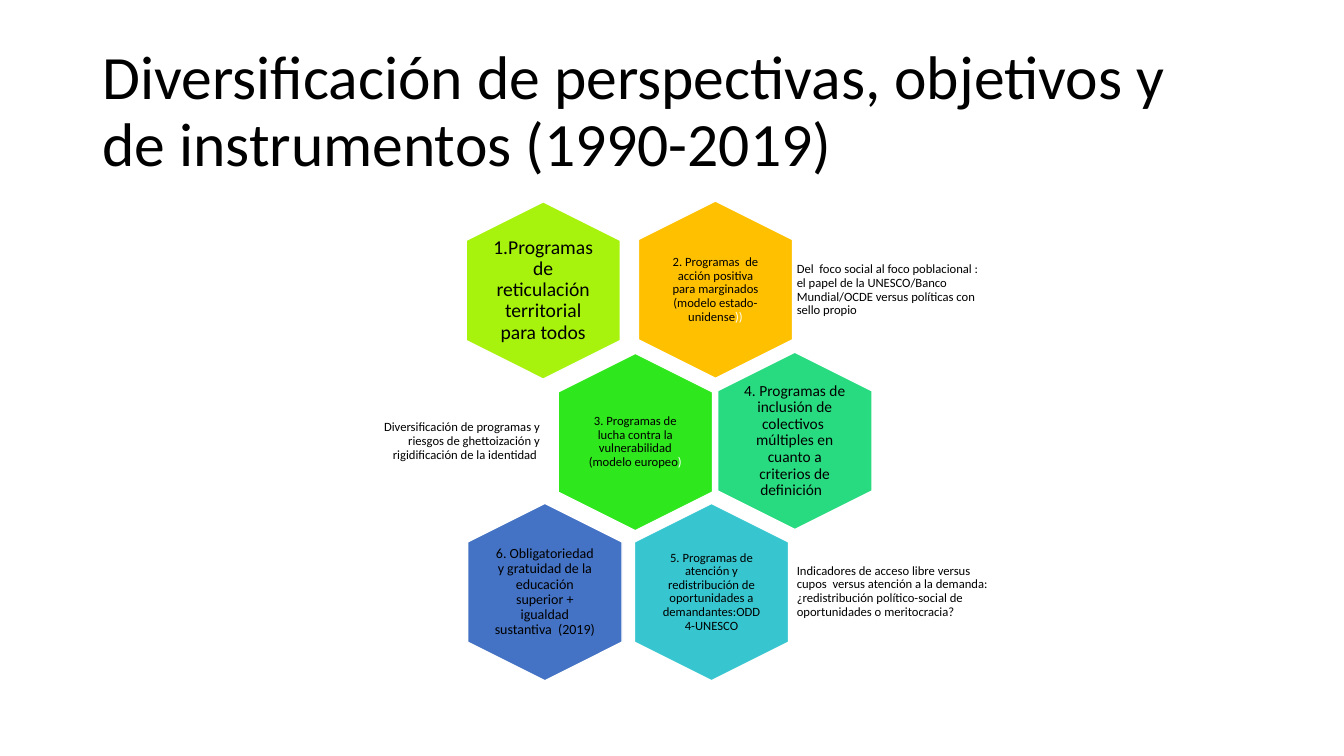
"""Build a slide with a honeycomb of six programmes and three side notes."""
import dataclasses
import typing

import pptx
import pptx.dml.color
import pptx.enum.shapes
import pptx.enum.text
import pptx.util

Cm = pptx.util.Cm
Align = pptx.enum.text.PP_ALIGN


@dataclasses.dataclass(frozen=True)
class Theme:
    """Colours, font and type sizes of the slide."""
    font: str = "Calibri"
    ink: str = "000000"
    paper: str = "FFFFFF"
    lime: str = "A7F30E"
    amber: str = "FFC000"
    green: str = "2EE71C"
    emerald: str = "29DB80"
    turquoise: str = "37C6CF"
    blue: str = "4472C4"
    title: int = 44
    large: int = 14
    medium: int = 11
    normal: int = 10
    small: int = 9


THEME = Theme()
HEXAGON_LENGTH, HEXAGON_BREADTH = 4.47, 3.89
LABEL_WIDTH, LABEL_HEIGHT = 2.69, 3.07
NOTE_HEIGHT = 2.69
INSET = 0.09


class Programme(typing.NamedTuple):
    """A hexagon with its centre, label and an optional pale ending."""
    center_x: float
    center_y: float
    color: str
    size: int
    inset: float
    label: str
    ending: str = ""


class Note(typing.NamedTuple):
    """A remark beside a row of hexagons."""
    left: float
    top: float
    width: float
    align: Align
    text: str


PROGRAMMES = [
    Programme(18.03, 7.3, THEME.amber, THEME.small, INSET,
              "2. Programas  de acción positiva para marginados (modelo estado-unidense", "))"),
    Programme(13.69, 7.32, THEME.lime, THEME.large, 0,
              "1.Programas de reticulación territorial para todos"),
    Programme(16.01, 11.14, THEME.green, THEME.small, INSET,
              "3. Programas de lucha contra la vulnerabilidad (modelo europeo", ")"),
    Programme(20.03, 11.11, THEME.emerald, THEME.medium, 0,
              "4. Programas de inclusión de colectivos  múltiples en cuanto a criterios de definición  "),
    Programme(17.93, 14.92, THEME.turquoise, THEME.small, INSET,
              "5. Programas de atención y redistribución de oportunidades a demandantes:ODD 4-UNESCO"),
    Programme(13.73, 14.92, THEME.blue, THEME.normal, 0,
              "6. Obligatoriedad y gratuidad de la educación superior + igualdad sustantiva  (2019)"),
]

NOTES = [
    Note(19.99, 5.97, 5, Align.LEFT,
         "Del  foco social al foco poblacional :  el papel de la UNESCO/Banco Mundial/OCDE "
         "versus políticas con sello propio"),
    Note(8.86, 9.78, 4.83, Align.RIGHT,
         "Diversificación de programas y riesgos de ghettoización y rigidificación de la identidad "),
    Note(19.99, 13.56, 5, Align.LEFT,
         "Indicadores de acceso libre versus cupos  versus atención a la demanda: "
         "¿redistribución político-social de oportunidades o meritocracia?"),
]


def rgb(color: str) -> pptx.dml.color.RGBColor:
    """Return the colour object for a hexadecimal string."""
    return pptx.dml.color.RGBColor.from_string(color)


def apply(target: object, values: dict[str, object]) -> None:
    """Set each named format value on the target."""
    for name, value in values.items():
        setattr(target, name, value)


def add_text(page, left: float, top: float, width: float, height: float, text: str, size: int,
             align: Align = Align.LEFT, inset: float = INSET, ending: str = "") -> None:
    """Add a wrapped, vertically centred text box."""
    box = page.shapes.add_textbox(Cm(left), Cm(top), Cm(width), Cm(height))
    margins = {f"margin_{side}": Cm(inset) for side in ("left", "top", "right", "bottom")}
    apply(box.text_frame, {
        "word_wrap": True,
        "vertical_anchor": pptx.enum.text.MSO_ANCHOR.MIDDLE,
        **margins,
    })
    para = box.text_frame.paragraphs[0]
    apply(para, {"alignment": align, "line_spacing": 0.9})
    for words, color in ((text, THEME.ink), (ending, THEME.paper)):
        if words:
            span = para.add_run()
            span.text = words
            apply(span.font, {"name": THEME.font, "size": pptx.util.Pt(size)})
            span.font.color.rgb = rgb(color)


def add_programme(page, programme: Programme) -> None:
    """Add an upright hexagon and the label at its centre."""
    x, y = programme.center_x, programme.center_y
    hexagon = page.shapes.add_shape(
        pptx.enum.shapes.MSO_SHAPE.HEXAGON,
        Cm(x - HEXAGON_LENGTH / 2), Cm(y - HEXAGON_BREADTH / 2),
        Cm(HEXAGON_LENGTH), Cm(HEXAGON_BREADTH))
    hexagon.rotation = 90
    hexagon.shadow.inherit = False
    hexagon.fill.solid()
    hexagon.fill.fore_color.rgb = rgb(programme.color)
    hexagon.line.color.rgb = rgb(THEME.paper)
    hexagon.line.width = pptx.util.Pt(1)
    add_text(page, x - LABEL_WIDTH / 2, y - LABEL_HEIGHT / 2, LABEL_WIDTH, LABEL_HEIGHT,
             programme.label, programme.size, Align.CENTER, programme.inset, programme.ending)


def main() -> None:
    """Build and save the deck."""
    deck = pptx.Presentation()
    apply(deck, {"slide_width": Cm(33.87), "slide_height": Cm(19.05)})
    page = deck.slides.add_slide(deck.slide_layouts[6])
    add_text(page, 2.33, 1.01, 29.21, 3.68,
             "Diversificación de perspectivas, objetivos y de instrumentos (1990-2019)",
             THEME.title, inset=0.25)
    for programme in PROGRAMMES:
        add_programme(page, programme)
    for note in NOTES:
        add_text(page, note.left, note.top, note.width, NOTE_HEIGHT,
                 note.text, THEME.small, note.align)
    deck.save("out.pptx")


if __name__ == "__main__":
    main()
